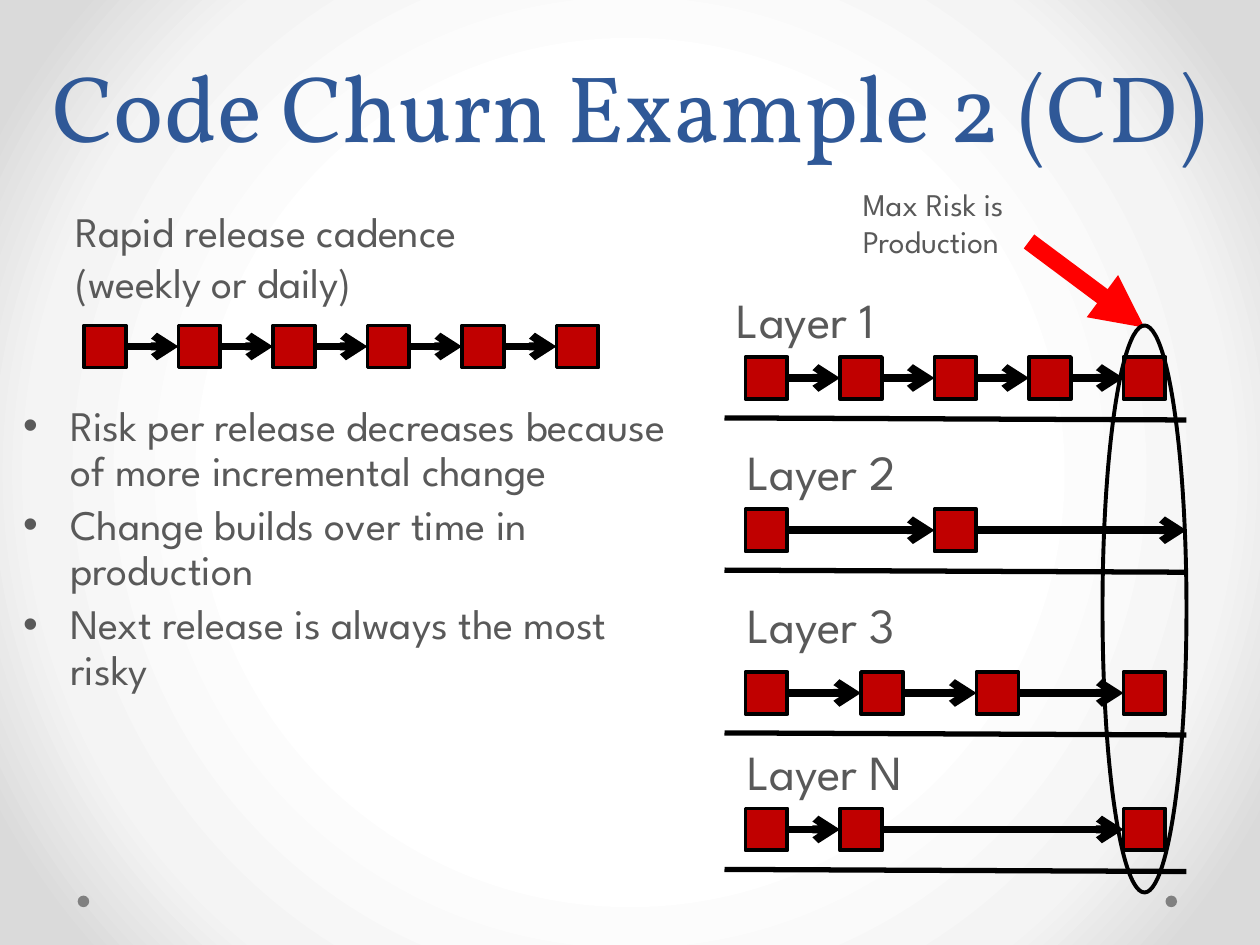
"""Build the slide on code churn under continuous delivery."""
from dataclasses import dataclass
from itertools import pairwise

from lxml.etree import SubElement as Sub
from pptx import Presentation
from pptx.dml.color import RGBColor as Rgb
from pptx.enum.shapes import MSO_CONNECTOR as Conn, MSO_SHAPE as Form
from pptx.enum.text import MSO_ANCHOR as Anchor, MSO_AUTO_SIZE as Fit, PP_ALIGN as Align
from pptx.oxml import parse_xml
from pptx.oxml.ns import nsdecls, qn
from pptx.util import Emu, Pt


@dataclass(frozen=True)
class Theme:
    head: str = "Vollkorn"
    body: str = "League Spartan"
    blue: str = "2F5897"
    gray: str = "595959"
    dot: str = "808080"
    red: str = "C00000"
    alert: str = "FF0000"
    black: str = "000000"
    title: int = 54
    label: int = 28
    text: int = 24
    note: int = 18
    edge: float = 2.25
    rule: float = 3
    flow: float = 4.5
    point: float = 10
    glow: tuple = ((50, "FFFFFF"), (76, "F4F4F4"), (92, "DADADA"))


TITLE = "Code Churn Example 2 (CD)"
CADENCE = ["Rapid release cadence", "(weekly or daily)"]
NOTE = ["Max Risk is Production"]
POINTS = [
    "Risk per release decreases because of more incremental change",
    "Change builds over time in production",
    "Next release is always the most risky",
]
LAYERS = [
    ("Layer 1", (690, 270), 340, [710, 800, 890, 980, 1070]),
    ("Layer 2", (700, 415), 485, [710, 890]),
    ("Layer 3", (700, 560), 640, [710, 820, 930, 1070]),
    ("Layer N", (700, 700), 770, [710, 800, 1070]),
]
RAPID = [80 + 90 * i for i in range(6)]
SIDE, LEFT, RIGHT = 40, 690, 1130
T = Theme()


def px(*nums):
    return [Emu(n * 7620) for n in nums]


def paint(shape, fill=None, line=None):
    shape.shadow.inherit = False
    if fill:
        shape.fill.solid()
        shape.fill.fore_color.rgb = Rgb.from_string(fill)
    else:
        shape.fill.background()
    if line:
        shape.line.color.rgb = Rgb.from_string(line)
        shape.line.width = Pt(T.edge)
    else:
        shape.line.fill.background()


def draw(slide, form, area, fill=None, line=None):
    shape = slide.shapes.add_shape(form, *px(*area))
    paint(shape, fill, line)
    return shape


def link(slide, ends, color, width, tip=None):
    line = slide.shapes.add_connector(Conn.STRAIGHT, *px(*ends))
    line.line.color.rgb = Rgb.from_string(color)
    line.line.width = Pt(width)
    if tip:
        Sub(line.line._get_or_add_ln(), qn("a:tailEnd"), type=tip)
    Sub(line._element.spPr, qn("a:effectLst"))
    return line


def write(frame, lines, size, color=T.gray, font=T.body):
    frame.word_wrap = True
    frame.auto_size = Fit.NONE
    for i, line in enumerate(lines):
        para = frame.add_paragraph() if i else frame.paragraphs[0]
        run = para.add_run()
        run.text = line
        run.font.size = Pt(size)
        run.font.name = font
        run.font.color.rgb = Rgb.from_string(color)


def place(shape, area):
    shape.left, shape.top, shape.width, shape.height = px(*area)


def label(slide, area, lines, size):
    write(slide.shapes.add_textbox(*px(*area)).text_frame, lines, size)


def chain(slide, lefts, top):
    boxes = [draw(slide, Form.RECTANGLE, (x, top, SIDE, SIDE), T.red, T.black)
             for x in lefts]
    mid = top + SIDE // 2
    for (x, a), (end, b) in pairwise(zip(lefts, boxes)):
        line = link(slide, (x + SIDE, mid, end, mid), T.black, T.flow, "arrow")
        line.begin_connect(a, 3)
        line.end_connect(b, 1)
    return boxes


def backdrop(slide):
    stops = "".join(f'<a:gs pos="{at * 1000}"><a:srgbClr val="{color}"/></a:gs>'
                    for at, color in T.glow)
    rect = " ".join(f'{side}="50000"' for side in "ltrb")
    back = parse_xml(
        f'<p:bg {nsdecls("p", "a")}><p:bgPr><a:gradFill rotWithShape="1">'
        f'<a:gsLst>{stops}</a:gsLst><a:path path="circle">'
        f'<a:fillToRect {rect}/></a:path></a:gradFill><a:effectLst/></p:bgPr></p:bg>')
    slide._element.cSld.insert(0, back)


def main():
    deck = Presentation()
    deck.slide_width, deck.slide_height = px(1200, 900)
    slide = deck.slides.add_slide(deck.slide_layouts[1])
    backdrop(slide)
    for x in (74, 1110):
        draw(slide, Form.OVAL, (x, 853, 11, 11), T.dot)

    title, body = slide.placeholders
    place(title, (0, -20, 1200, 180))
    write(title.text_frame, [TITLE], T.title, T.blue, T.head)
    title.text_frame.vertical_anchor = Anchor.BOTTOM
    para = title.text_frame.paragraphs[0]
    para.alignment = Align.CENTER
    para.line_spacing = Pt(58)

    place(body, (10, 380, 650, 342))
    write(body.text_frame, POINTS, T.text)
    for para in body.text_frame.paragraphs:
        para.line_spacing = 0.9

    label(slide, (60, 190, 560, 109), CADENCE, T.text)
    chain(slide, RAPID, 310)

    for name, (x, y), top, lefts in LAYERS:
        label(slide, (x, y, 230, 68), [name], T.label)
        boxes = chain(slide, lefts, top)
        if lefts[-1] < 1070:
            mid = top + SIDE // 2
            line = link(slide, (lefts[-1] + SIDE, mid, RIGHT, mid),
                        T.black, T.flow, "arrow")
            line.begin_connect(boxes[-1], 3)
        link(slide, (LEFT, top + 58, RIGHT, top + 60), T.black, T.rule)

    label(slide, (810, 170, 230, 85), NOTE, T.note)
    link(slide, (980, 230, 1090, 312), T.alert, T.point, "triangle")
    draw(slide, Form.OVAL, (1050, 310, 80, 540), line=T.black)
    deck.save("out.pptx")


if __name__ == "__main__":
    main()
